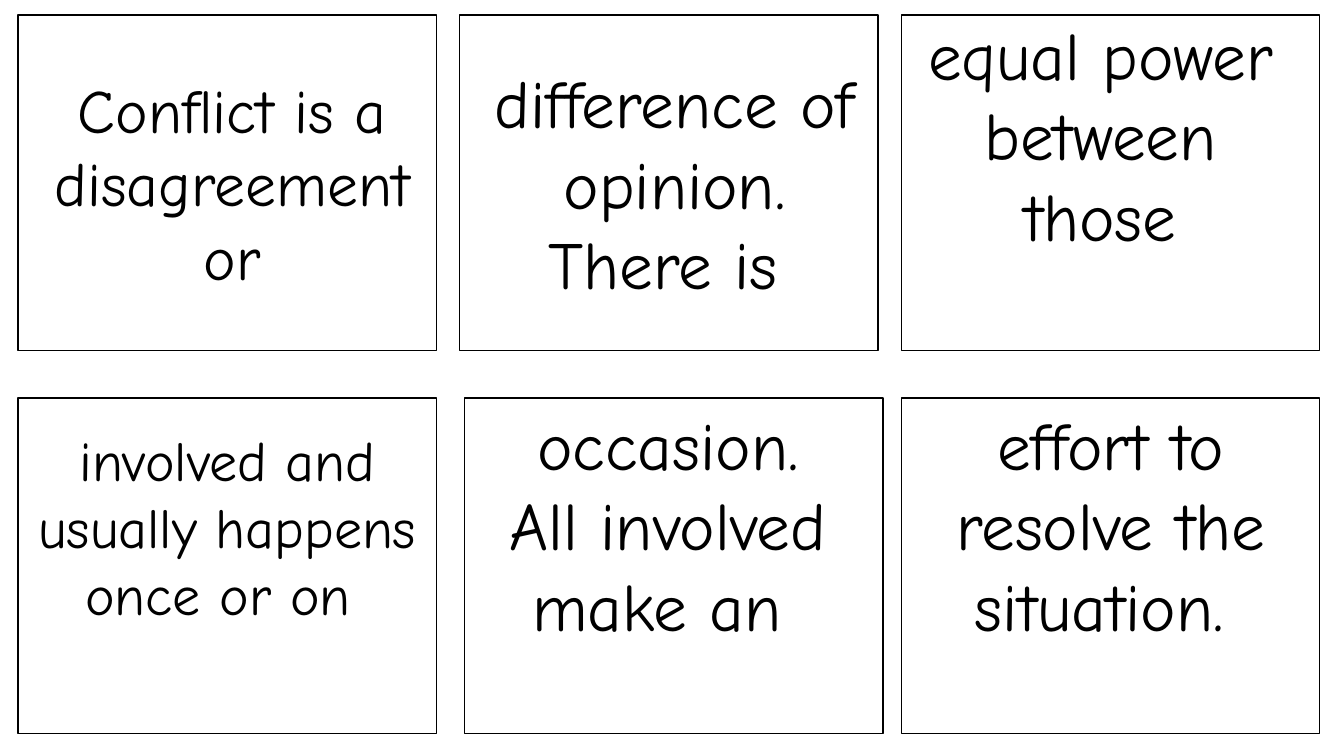
"""Build a slide of six cards that define conflict."""
import pptx
import pptx.util
import pptx.dml.color
import pptx.enum.shapes
import pptx.enum.text

HUES = {"ink": "000000", "card": "FFFFFF"}


class Deck:
    def __init__(self):
        self.deck = pptx.Presentation()
        self.deck.slide_width = pptx.util.Inches(13.33)
        self.deck.slide_height = pptx.util.Inches(7.5)
        self.slide = self.deck.slides.add_slide(self.deck.slide_layouts[6])
        self.face = "Comic Neue"

    def hue(self, name):
        return pptx.dml.color.RGBColor.from_string(HUES[name])

    def place(self, left, top, width, height):
        wide, high = self.deck.slide_width, self.deck.slide_height
        sides = ((left, wide), (top, high), (width, wide), (height, high))
        return [round(share * side / 100) for share, side in sides]

    def card(self, *area):
        kind = pptx.enum.shapes.MSO_SHAPE.RECTANGLE
        card = self.slide.shapes.add_shape(kind, *self.place(*area))
        card.shadow.inherit = False
        card.fill.solid()
        card.fill.fore_color.rgb = self.hue("card")
        card.line.color.rgb = self.hue("ink")
        card.line.width = pptx.util.Pt(1)

    def text(self, words, size, *area):
        frame = self.slide.shapes.add_textbox(*self.place(*area)).text_frame
        frame.word_wrap = True
        frame.auto_size = pptx.enum.text.MSO_AUTO_SIZE.SHAPE_TO_FIT_TEXT
        line = frame.paragraphs[0]
        line.text = words
        line.alignment = pptx.enum.text.PP_ALIGN.CENTER
        line.font.name = self.face
        line.font.size = pptx.util.Pt(size)
        line.font.color.rgb = self.hue("ink")


def main():
    deck = Deck()
    wide, high = 31.13, 44.4
    slim = 27.68
    low = 52.67
    nudge = {(1, 1): 0.37}
    for row in range(2):
        for col in range(3):
            left = 1.35 + 32.86 * col + nudge.get((row, col), 0)
            deck.card(left, 2 + 50.67 * row, wide, high)

    parts = [
        ("Conflict is a disagreement or", 44, 1.95, 8.8, 30.68, 30.93),
        ("difference of opinion. There is ", 48, 35.03, 7.47, 30.31, 33.6),
        ("equal power between those", 48, 68.04, 1.07, slim, high),
        ("involved and usually happens once or on ", 40, 1.35, 55.6, wide, 37.2),
        ("occasion. All involved make an ", 48, 35.86, low, slim, high),
        ("effort to resolve the situation. ", 48, 68.79, low, slim, high),
    ]
    for part in parts:
        deck.text(*part)
    deck.deck.save("out.pptx")


if __name__ == "__main__":
    main()
